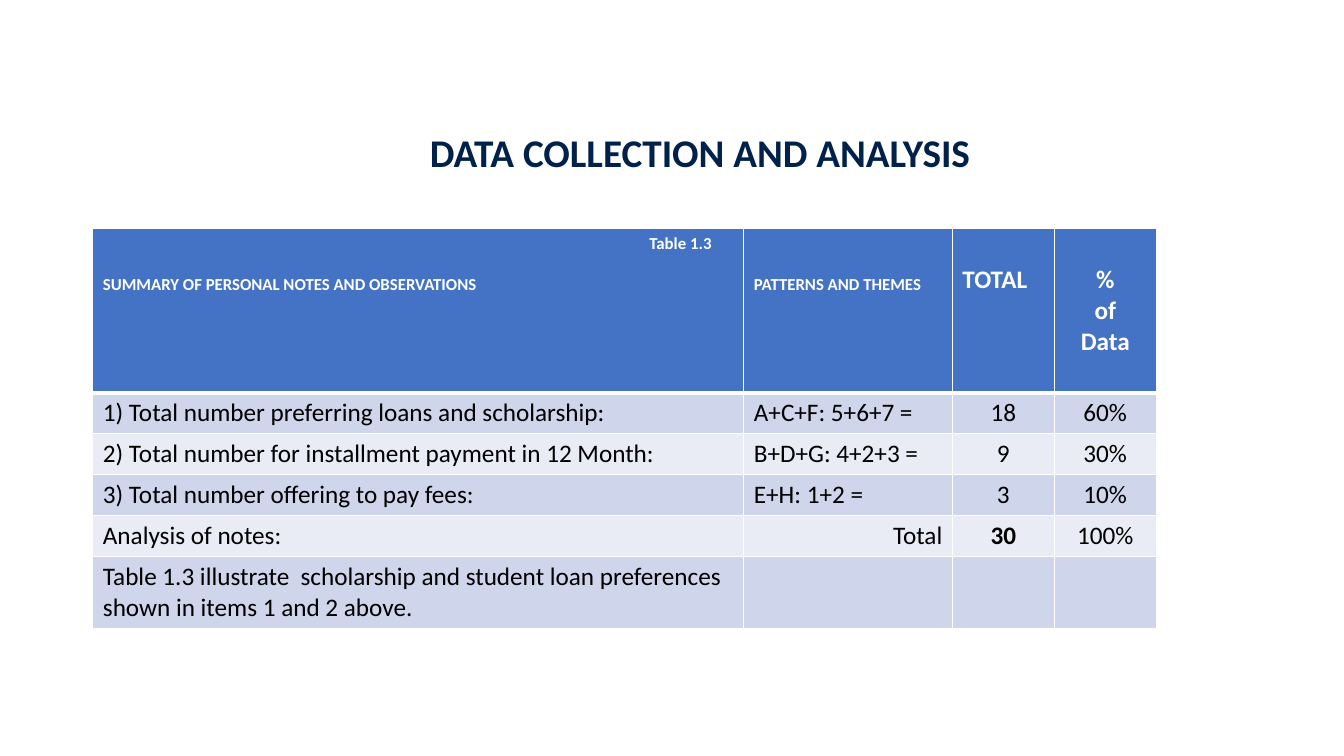
"""Build the data collection and analysis slide."""
from dataclasses import dataclass

from lxml import etree
from pptx import Presentation
from pptx.dml.color import RGBColor
from pptx.enum import text
from pptx.oxml import ns
from pptx.util import Pt

LEFT, CENTER, RIGHT = text.PP_ALIGN.LEFT, text.PP_ALIGN.CENTER, text.PP_ALIGN.RIGHT


@dataclass(frozen=True)
class Theme:
    """Colours, font and type sizes of the slide."""
    font: str = "Calibri"
    navy: str = "00214A"
    header: str = "4472C4"
    bands: tuple = ("CFD5EA", "E9EBF5")
    white: str = "FFFFFF"
    black: str = "000000"
    title: int = 28
    body: int = 18
    small: int = 12


THEME = Theme()
COLUMN_WIDTHS = (465, 149, 72.8, 72.8)
ROW_HEIGHTS = (117, 29.3, 29.3, 29.3, 29.3, 51.2)
HEADERS = (
    (("Table 1.3", RIGHT), ("SUMMARY OF PERSONAL NOTES AND OBSERVATIONS", LEFT)),
    (("PATTERNS AND THEMES", LEFT),),
    (("TOTAL", LEFT),),
    (("%", CENTER), ("of", CENTER), ("Data", CENTER)),
)
HEADER_SIZES = (THEME.small, THEME.small, THEME.body, THEME.body)
HEADER_TOPS = (3.6, 32.9, 25.6, 25.6)
FINDINGS = (
    ("1) Total number preferring loans and scholarship:", "A+C+F: 5+6+7 =", "18", "60%"),
    ("2) Total number for installment payment in 12 Month:", "B+D+G: 4+2+3 =", "9", "30%"),
    ("3) Total number offering to pay fees:", "E+H: 1+2 =", "3", "10%"),
    ("Analysis of notes:", "Total", "30", "100%"),
    ("Table 1.3 illustrate  scholarship and student loan preferences "
     "shown in items 1 and 2 above.", "", "", ""),
)
FINDING_ALIGNS = (LEFT, LEFT, CENTER, CENTER)


def write(paragraph, wording, size, color, bold=False, align=LEFT):
    """Add one styled run to a paragraph."""
    paragraph.alignment = align
    run = paragraph.add_run()
    run.text = wording
    run.font.name = THEME.font
    run.font.size = Pt(size)
    run.font.bold = bold
    run.font.color.rgb = RGBColor.from_string(color)


def paint_cell(cell, fill, bottom=1):
    """Fill a cell and give it white borders."""
    cell.fill.solid()
    cell.fill.fore_color.rgb = RGBColor.from_string(fill)
    properties = cell._tc.get_or_add_tcPr()
    for place, (side, width) in enumerate((("L", 1), ("R", 1), ("T", 1), ("B", bottom))):
        border = etree.Element(ns.qn(f"a:ln{side}"), w=str(Pt(width)))
        solid = etree.SubElement(border, ns.qn("a:solidFill"))
        etree.SubElement(solid, ns.qn("a:srgbClr"), val=THEME.white)
        properties.insert(place, border)


def add_title(slide):
    """Add the slide title."""
    title = slide.shapes.add_textbox(Pt(34), Pt(86.4), Pt(850), Pt(49))
    frame = title.text_frame
    frame.word_wrap = True
    frame.vertical_anchor = text.MSO_ANCHOR.MIDDLE
    frame.margin_left = Pt(89)
    heading = frame.paragraphs[0]
    heading.line_spacing = 0.9
    write(heading, "DATA COLLECTION AND ANALYSIS", THEME.title, THEME.navy, True, CENTER)


def fill_header(table):
    """Write the heading row."""
    for column, (lines, size, top) in enumerate(zip(HEADERS, HEADER_SIZES, HEADER_TOPS)):
        cell = table.cell(0, column)
        paint_cell(cell, THEME.header, bottom=3)
        cell.margin_top = Pt(top)
        frame = cell.text_frame
        for number, (wording, align) in enumerate(lines):
            paragraph = frame.add_paragraph() if number else frame.paragraphs[0]
            write(paragraph, wording, size, THEME.white, True, align)
    summary = table.cell(0, 0)
    summary.margin_right = Pt(23)
    summary.text_frame.paragraphs[1].space_before = Pt(14.6)


def fill_findings(table):
    """Write the banded rows of findings."""
    for row, finding in enumerate(FINDINGS, start=1):
        for column, wording in enumerate(finding):
            cell = table.cell(row, column)
            paint_cell(cell, THEME.bands[(row - 1) % 2], bottom=1)
            if wording:
                align = RIGHT if wording == "Total" else FINDING_ALIGNS[column]
                write(cell.text_frame.paragraphs[0], wording, THEME.body, THEME.black,
                      wording == "30", align)


def add_findings_table(slide):
    """Add the table of notes, themes and totals."""
    table = slide.shapes.add_table(
        len(ROW_HEIGHTS), len(COLUMN_WIDTHS), Pt(66.3), Pt(163.5),
        Pt(sum(COLUMN_WIDTHS)), Pt(sum(ROW_HEIGHTS))).table
    for column, width in zip(table.columns, COLUMN_WIDTHS):
        column.width = Pt(width)
    for row, height in zip(table.rows, ROW_HEIGHTS):
        row.height = Pt(height)
    fill_header(table)
    fill_findings(table)


def main():
    """Create and save the slide."""
    deck = Presentation()
    deck.slide_width, deck.slide_height = Pt(960), Pt(540)
    slide = deck.slides.add_slide(deck.slide_layouts[6])
    add_title(slide)
    add_findings_table(slide)
    deck.save("out.pptx")


if __name__ == "__main__":
    main()
